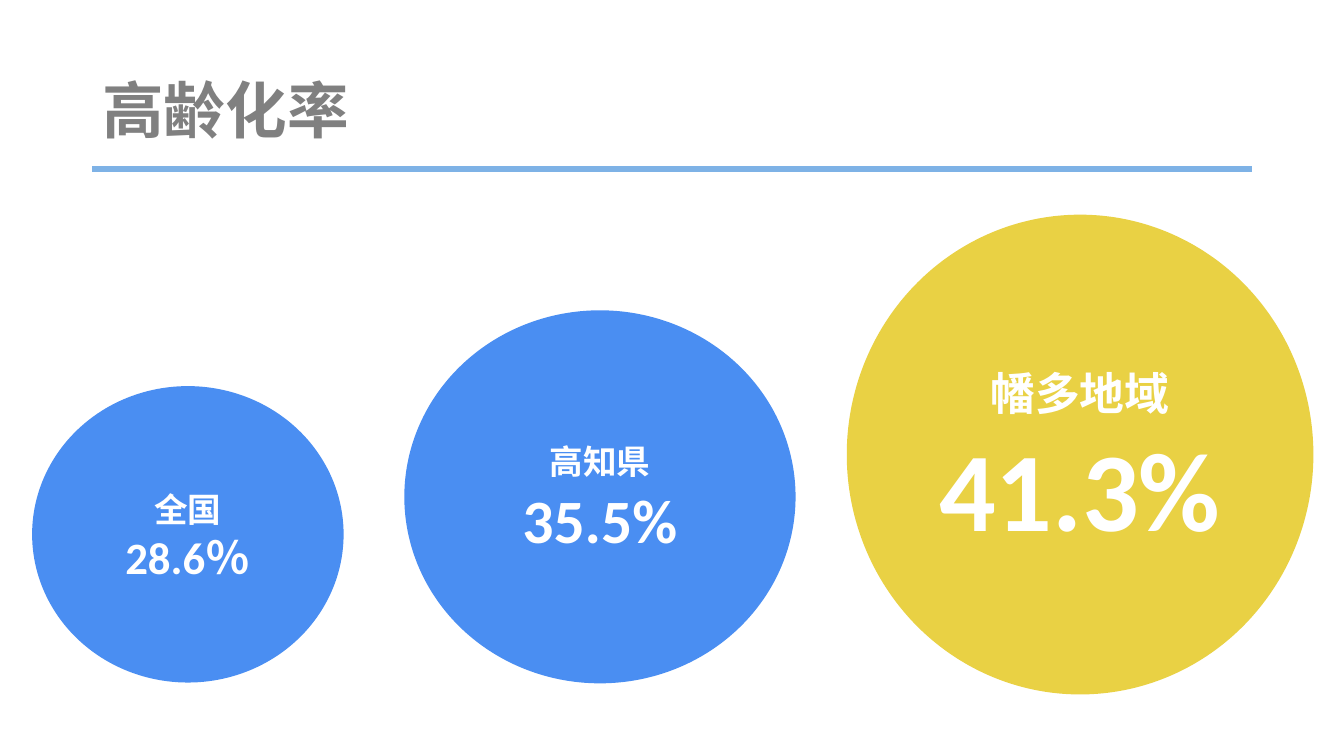
from dataclasses import dataclass

from lxml.etree import SubElement
from pptx import Presentation
from pptx.dml.color import RGBColor
from pptx.enum.shapes import MSO_CONNECTOR, MSO_SHAPE
from pptx.enum.text import MSO_ANCHOR, PP_ALIGN
from pptx.oxml.ns import qn
from pptx.util import Cm, Pt


@dataclass(frozen=True)
class Theme:
    font: str = "Calibri"
    title_color: RGBColor = RGBColor(0x80, 0x80, 0x80)
    rule_color: RGBColor = RGBColor(0x7E, 0xB2, 0xE6)
    blue: RGBColor = RGBColor(0x4A, 0x8E, 0xF2)
    gold: RGBColor = RGBColor(0xE9, 0xD1, 0x44)
    white: RGBColor = RGBColor(0xFF, 0xFF, 0xFF)
    title_size: int = 44
    label_size: int = 24
    focus_label_size: int = 32
    national_size: int = 32
    prefecture_size: int = 44
    focus_size: int = 80
    rule_width: int = 4


THEME = Theme()


@dataclass(frozen=True)
class Box:
    left: float
    top: float
    width: float
    height: float

    def lengths(self):
        return Cm(self.left), Cm(self.top), Cm(self.width), Cm(self.height)


@dataclass(frozen=True)
class Rate:
    region: str
    value: str
    box: Box
    fill: RGBColor
    label_size: int
    value_size: int
    top_inset: float


RATES = (
    Rate("全国", "28.6％", Box(0.81, 9.73, 7.85, 7.47), THEME.blue,
         THEME.label_size, THEME.national_size, 0.21),
    Rate("高知県", "35.5%", Box(10.19, 7.82, 9.86, 9.4), THEME.blue,
         THEME.label_size, THEME.prefecture_size, 0.21),
    Rate("幡多地域", "41.3%", Box(21.34, 5.41, 11.76, 12.09), THEME.gold,
         THEME.focus_label_size, THEME.focus_size, 0.39),
)


def add_text(paragraph, text, size, color):
    run = paragraph.add_run()
    run.text = text
    run.font.name = THEME.font
    run.font.size = Pt(size)
    run.font.bold = True
    run.font.color.rgb = color


def add_heading(slide, box, text):
    """Place the title in the box and a rule near its lower edge."""
    frame = slide.shapes.add_textbox(*box.lengths()).text_frame
    frame.word_wrap = True
    frame.vertical_anchor = MSO_ANCHOR.MIDDLE
    paragraph = frame.paragraphs[0]
    paragraph.line_spacing = 0.9
    add_text(paragraph, text, THEME.title_size, THEME.title_color)

    rule_top = Cm(box.top + box.height - 0.43)
    rule = slide.shapes.add_connector(
        MSO_CONNECTOR.STRAIGHT,
        Cm(box.left), rule_top, Cm(box.left + box.width), rule_top)
    rule.line.color.rgb = THEME.rule_color
    rule.line.width = Pt(THEME.rule_width)
    SubElement(rule._element.spPr, qn("a:effectLst"))


def add_rate_circle(slide, rate):
    circle = slide.shapes.add_shape(MSO_SHAPE.OVAL, *rate.box.lengths())
    circle.shadow.inherit = False
    circle.fill.solid()
    circle.fill.fore_color.rgb = rate.fill
    circle.line.fill.background()
    frame = circle.text_frame
    frame.word_wrap = True
    frame.vertical_anchor = MSO_ANCHOR.MIDDLE
    frame.margin_top = Cm(rate.top_inset)
    lines = ((rate.region, rate.label_size), (rate.value, rate.value_size))
    for index, (text, size) in enumerate(lines):
        paragraph = frame.add_paragraph() if index else frame.paragraphs[0]
        paragraph.alignment = PP_ALIGN.CENTER
        add_text(paragraph, text, size, THEME.white)


def main():
    presentation = Presentation()
    presentation.slide_width = Cm(33.87)
    presentation.slide_height = Cm(19.05)
    slide = presentation.slides.add_slide(presentation.slide_layouts[6])
    add_heading(slide, Box(2.33, 1.01, 29.21, 3.68), "高齢化率")
    for rate in RATES:
        add_rate_circle(slide, rate)
    presentation.save("out.pptx")


if __name__ == "__main__":
    main()
